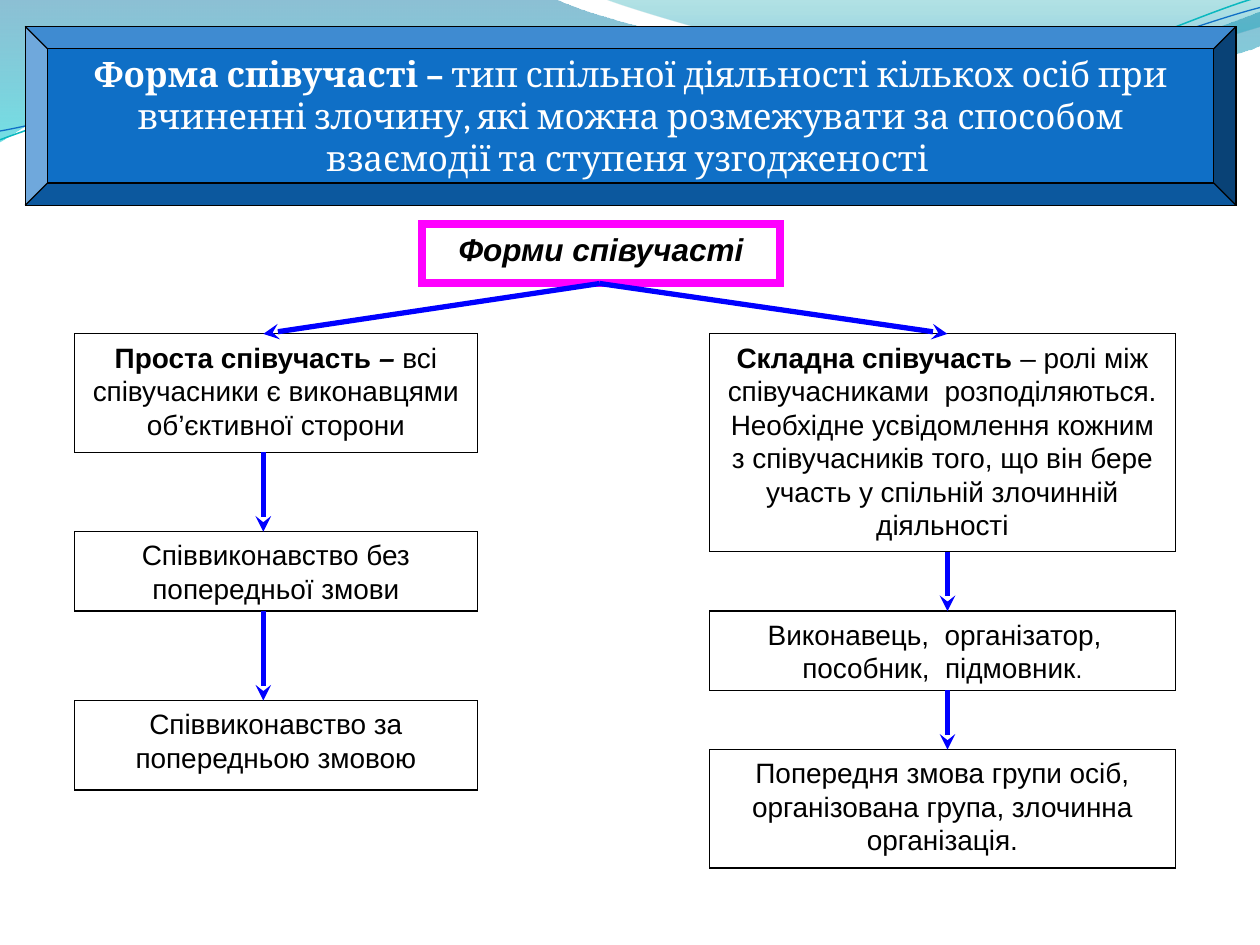
"""Build a slide on the forms of complicity as a two-branch flow chart."""
from lxml import etree
from pptx import Presentation
from pptx.dml.color import RGBColor
from pptx.enum.shapes import MSO_CONNECTOR, MSO_SHAPE
from pptx.enum.text import MSO_ANCHOR, PP_ALIGN
from pptx.oxml.ns import qn
from pptx.util import Inches, Pt

RECT, BEVEL = MSO_SHAPE.RECTANGLE, MSO_SHAPE.BEVEL
LINE = MSO_CONNECTOR.STRAIGHT
TOP, MID = MSO_ANCHOR.TOP, MSO_ANCHOR.MIDDLE
CENTER = PP_ALIGN.CENTER
HEX = {
    "white": "FFFFFF", "black": "000000", "blue": "0F6FC6", "pink": "FF00FF",
    "arrow": "0000FF", "teal": "0AB8BF", "deep": "0074A1", "cyan": "00C6CF",
    "sea": "00A1A9", "sky": "008BBF",
}
RGB = {name: RGBColor.from_string(code) for name, code in HEX.items()}

prs = Presentation()
prs.slide_width, prs.slide_height = Inches(10), Inches(7.5)
slide = prs.slides.add_slide(prs.slide_layouts[6])
shapes = slide.shapes


def draw_wave(steps, closed):
    """Draw points (2 numbers) and Bezier curves (6 numbers) as one outline."""
    dots = [tuple(map(Inches, s[i:i + 2])) for s in steps for i in range(0, len(s), 2)]
    pen = shapes.build_freeform(*dots[0])
    pen.add_line_segments(dots[1:], close=closed)
    wave = pen.convert_to_shape()
    wave.shadow.inherit = False
    legs = iter(list(wave.element.spPr.iter(qn("a:lnTo"))))
    for step in steps[1:]:
        leg = next(legs)
        if len(step) == 6:
            leg.tag = qn("a:cubicBezTo")
            for _ in range(2):
                spare = next(legs)
                leg.append(spare[0])
                spare.getparent().remove(spare)
    return wave


def add_box(kind, place, fill, edge, width, anchor, runs, font, ink):
    """Add a filled box with centred runs of (text, size, bold, italic)."""
    box = shapes.add_shape(kind, *map(Inches, place))
    box.shadow.inherit = False
    box.fill.solid()
    box.fill.fore_color.rgb = RGB[fill]
    box.line.color.rgb = RGB[edge]
    box.line.width = Pt(width)
    etree.SubElement(box.element.spPr.find(qn("a:ln")), qn("a:miter"), lim="800000")
    frame = box.text_frame
    frame.word_wrap = True
    frame.vertical_anchor = anchor
    para = frame.paragraphs[0]
    para.alignment = CENTER
    for text, size, bold, slant in runs:
        run = para.add_run()
        run.text = text
        run.font.name, run.font.size = font, Pt(size)
        run.font.bold, run.font.italic = bold, slant
        run.font.color.rgb = RGB[ink]
    return box


bands = [
    ([(0, 0), (4.4, -0.01), (4.76, 0.17, 6.64, 0.63, 7.58, 0.63),
      (8.53, 0.63, 9.58, 0.26, 10, 0.09), (10.01, 0.36),
      (9.83, 0.44, 8.7, 0.76, 7.46, 0.75), (6.22, 0.75, 3.82, 0.28, 2.57, 0.34),
      (1.29, 0.36, 0.46, 0.83, -0.01, 1.13), (0, 0)],
     [(0, "deep", 45), (1, "cyan", 55)]),
    ([(4.79, -0.01), (5.09, 0.11, 6.82, 0.62, 7.69, 0.65),
      (8.56, 0.69, 9.61, 0.32, 10, 0.21), (10, 0), (4.79, -0.01)],
     [(0, "sea", 30), (0.8, "sky", 45)]),
]
for steps, stops in bands:
    band = draw_wave(steps, True)
    band.line.fill.background()
    band.fill.gradient()
    band.fill.gradient_angle = 270
    for stop, (pos, tint, alpha) in zip(band.fill.gradient_stops, stops):
        stop.position = pos
        stop.color.rgb = RGB[tint]
    marks = list(band.element.spPr.iter(qn("a:srgbClr")))
    for mark, (pos, tint, alpha) in zip(marks, stops):
        etree.SubElement(mark, qn("a:alpha"), val=str(alpha * 1000))

threads = [
    ([(0, 1.11), (0.48, 0.93, 1.58, 0.57, 2.77, 0.52),
      (3.95, 0.47, 5.93, 0.89, 7.13, 0.8), (8.33, 0.71, 9.38, 0.15, 9.98, -0.02)],
     "teal", 0.85),
    ([(0, 1.04), (0.47, 0.96, 1.64, 0.61, 2.83, 0.56),
      (4.03, 0.51, 5.97, 0.84, 7.17, 0.75), (8.36, 0.67, 9.41, 0.21, 10, 0.06)],
     "blue", 0.75),
]
for steps, tint, width in threads:
    thread = draw_wave(steps, False)
    thread.fill.background()
    thread.line.color.rgb = RGB[tint]
    thread.line.width = Pt(width)

title = add_box(
    BEVEL, (0.2, 0.21, 9.61, 1.42), "blue", "black", 0.75, MID,
    [("Форма співучасті – ", 20, True, False),
     ("тип спільної діяльності кількох осіб при вчиненні злочину, які можна "
      "розмежувати за способом взаємодії та ступеня узгодженості", 20, False, False),
     (" ", 18, False, False)],
    "Cambria", "white")
title.adjustments[0] = 0.125
add_box(RECT, (3.35, 1.78, 2.84, 0.47), "white", "pink", 4.5, TOP,
        [("Форми співучасті", 18, True, True)], "Arial", "black")

columns = [
    (0.59, 3.2, 2.09, [
        (2.65, 0.94, [("Проста співучасть", 16, True, False), (" – ", 16, True, True),
                      ("всі співучасники є виконавцями об’єктивної сторони",
                       16, False, False)]),
        (4.22, 0.63, [("Співвиконавство без попередньої змови", 16, False, False)]),
        (5.56, 0.71, [("Співвиконавство за попередньою змовою", 16, False, False)]),
    ]),
    (5.63, 3.7, 7.52, [
        (2.65, 1.73, [("Складна співучасть ", 16, True, False),
                      ("– ролі між співучасниками  розподіляються. Необхідне "
                       "усвідомлення кожним з співучасників того, що він бере "
                       "участь у спільній злочинній діяльності", 16, False, False)]),
        (4.85, 0.63, [("Виконавець,  організатор,   пособник,  підмовник",
                       16, False, False), (".", 14, False, False)]),
        (5.95, 0.94, [("Попередня змова групи осіб, організована група, "
                       "злочинна організація.", 16, False, False)]),
    ]),
]
arrows = []
for left, width, axis, boxes in columns:
    start = (4.76, 2.25)
    for top, height, runs in boxes:
        add_box(RECT, (left, top, width, height), "white", "black", 0.75, TOP,
                runs, "Arial", "black")
        arrows.append((*start, axis, top))
        start = (axis, top + height)

for ends in arrows:
    arrow = shapes.add_connector(LINE, *map(Inches, ends))
    arrow.line.color.rgb = RGB["arrow"]
    arrow.line.width = Pt(3)
    frame = arrow.element.spPr
    etree.SubElement(frame.find(qn("a:ln")), qn("a:tailEnd"), type="stealth")
    etree.SubElement(frame, qn("a:effectLst"))

prs.save("out.pptx")
